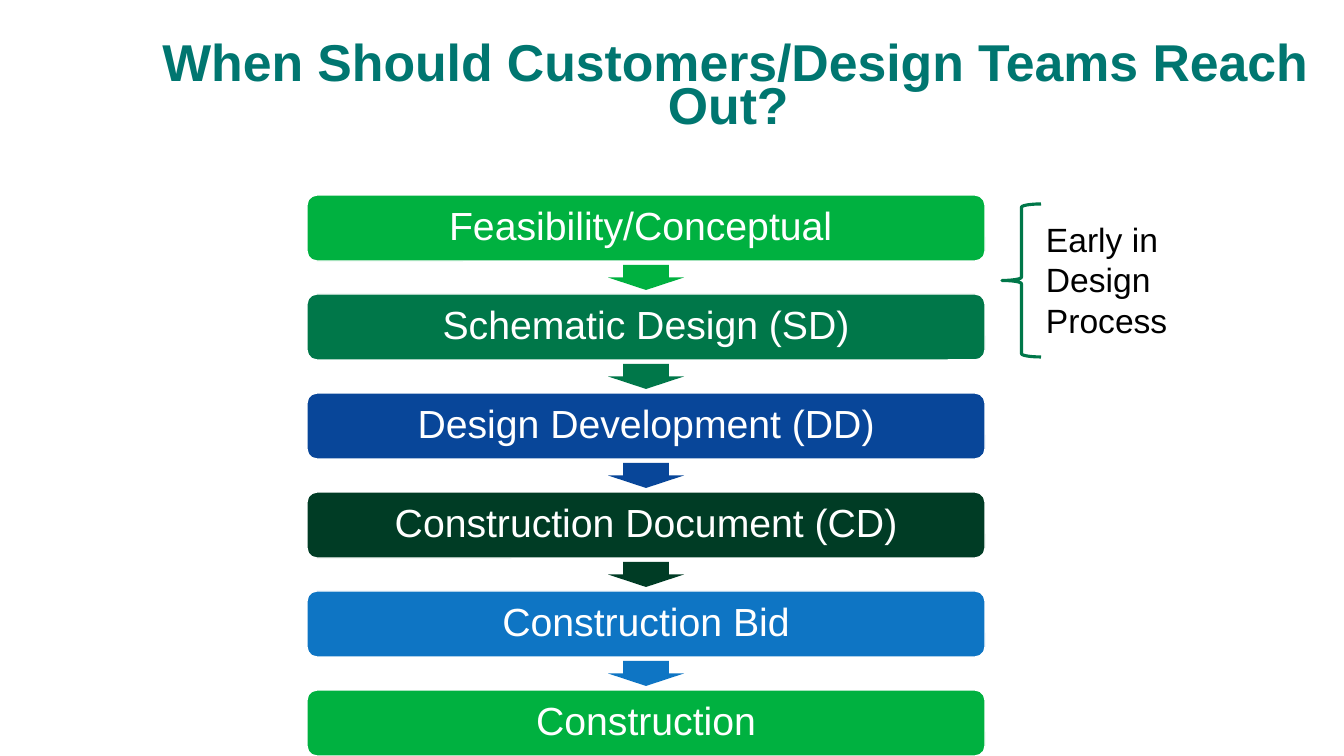
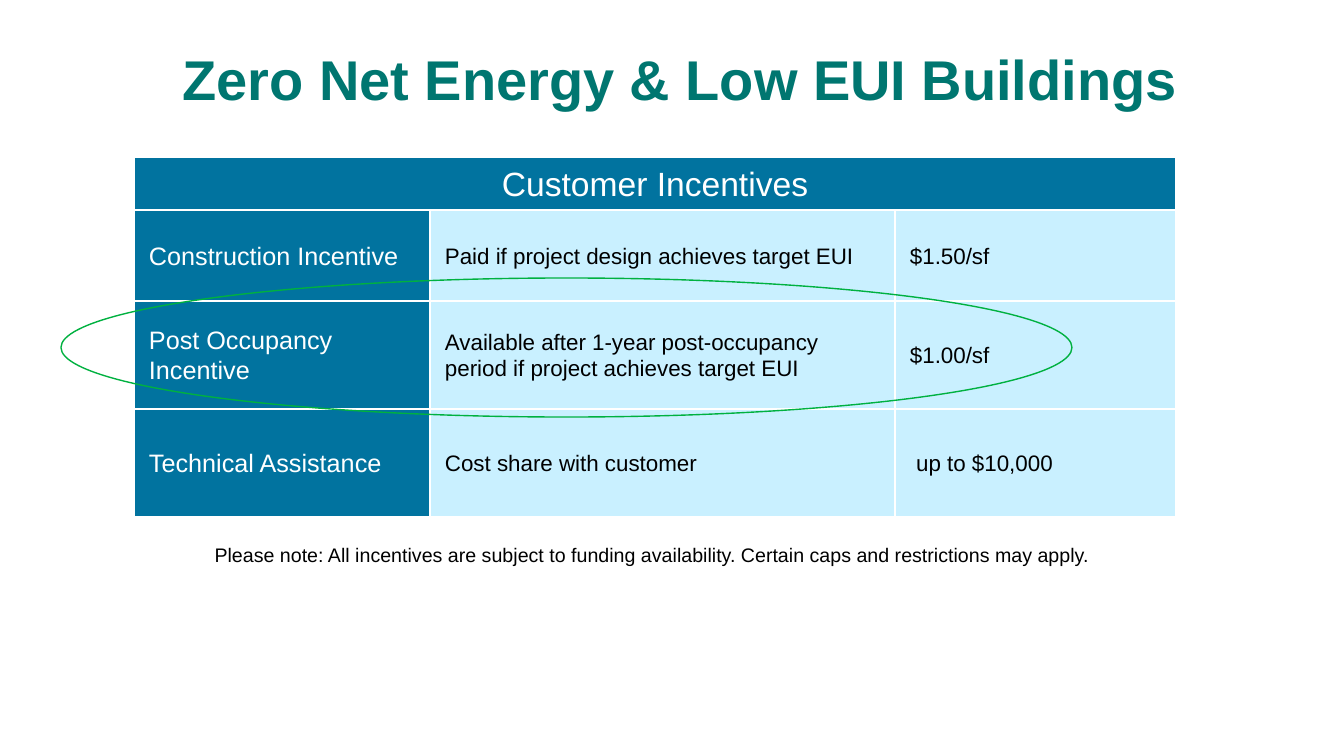
from lxml import etree
from pptx import Presentation
from pptx.dml.color import RGBColor
from pptx.enum import shapes, text
from pptx.oxml import ns
from pptx.util import Emu, Pt

PX = 914400 / 100.8
FONT = "Arial"
WHITE = RGBColor(0xFF, 0xFF, 0xFF)
BLACK = RGBColor(0x00, 0x00, 0x00)
TEAL = RGBColor(0x00, 0x76, 0x70)
GREEN = RGBColor(0x00, 0xB1, 0x40)
FOREST = RGBColor(0x00, 0x77, 0x49)
NAVY = RGBColor(0x08, 0x46, 0x99)
DARK_GREEN = RGBColor(0x00, 0x3C, 0x25)
BLUE = RGBColor(0x0E, 0x75, 0xC4)
HEADER_BLUE = RGBColor(0x01, 0x73, 0x9F)
PALE_BLUE = RGBColor(0xC9, 0xF0, 0xFF)

LEFT, CENTER = text.PP_ALIGN.LEFT, text.PP_ALIGN.CENTER
MIDDLE = text.MSO_ANCHOR.MIDDLE

PHASES = [
    ("Feasibility/Conceptual\u00a0", GREEN),
    ("Schematic Design (SD)", FOREST),
    ("Design Development (DD)", NAVY),
    ("Construction Document (CD)", DARK_GREEN),
    ("Construction Bid", BLUE),
    ("Construction", GREEN),
]
INCENTIVES = [
    ("Construction Incentive", "Paid if project design achieves target EUI", "$1.50/sf"),
    ("Post Occupancy Incentive",
     "Available after 1-year post-occupancy period if project achieves target EUI", "$1.00/sf"),
    ("Technical Assistance", "Cost share with customer", " up to $10,000"),
]


def px(length):
    return Emu(round(length * PX))


def write(frame, content, size, color, align=LEFT, bold=False, spacing=None):
    frame.word_wrap = True
    paragraph = frame.paragraphs[0]
    paragraph.text = content
    paragraph.alignment = align
    paragraph.line_spacing = spacing
    font = paragraph.font
    font.name, font.size, font.bold = FONT, Pt(size), bold
    font.color.rgb = color


def add_text(slide, box, content, size, color=BLACK, anchor=None, **style):
    frame = slide.shapes.add_textbox(*map(px, box)).text_frame
    frame.vertical_anchor = anchor
    write(frame, content, size, color, **style)


def add_title(slide, box, content, size, spacing):
    add_text(slide, box, content, size, TEAL, MIDDLE, align=CENTER, bold=True, spacing=spacing)


def add_shape(slide, kind, box, fill=None, line=None, width=1):
    shape = slide.shapes.add_shape(kind, *map(px, box))
    shape.shadow.inherit = False
    if fill is None:
        shape.fill.background()
    else:
        shape.fill.solid()
        shape.fill.fore_color.rgb = fill
    if line is None:
        shape.line.fill.background()
    else:
        shape.line.color.rgb = line
        shape.line.width = Pt(width)
    return shape


def add_phases(slide, box):
    """Stack of phase bars, each joined to the next by an arrow."""
    left, top, width, height = box
    bar_height, gap, arrow_width, arrow_height = 66, 4, 76, 25
    pitch = (height - bar_height) / (len(PHASES) - 1)
    for index, (name, color) in enumerate(PHASES):
        y = top + index * pitch
        bar = add_shape(slide, shapes.MSO_SHAPE.ROUNDED_RECTANGLE,
                        (left, y, width, bar_height), color, WHITE)
        bar.adjustments[0] = 0.15
        bar.text_frame.vertical_anchor = MIDDLE
        write(bar.text_frame, name, 28, WHITE, CENTER, spacing=0.9)
        if index < len(PHASES) - 1:
            arrow = add_shape(slide, shapes.MSO_SHAPE.DOWN_ARROW,
                              (left + (width - arrow_width) / 2, y + bar_height + gap,
                               arrow_width, arrow_height), color)
            arrow.adjustments[0], arrow.adjustments[1] = 0.6, 0.5


def add_brace_note(slide, box, content):
    """Brace with its remark on the right."""
    left, top, width, height = box
    brace_width = 39
    add_shape(slide, shapes.MSO_SHAPE.LEFT_BRACE, (left, top, brace_width, height),
              line=FOREST, width=2.25)
    add_text(slide, (left + 34, top + 10, width - 34, height - 20), content, 24)


def style_cell(cell, content, size, color, fill, margin, align=LEFT):
    cell.fill.solid()
    cell.fill.fore_color.rgb = fill
    cell.vertical_anchor = MIDDLE
    cell.margin_left = cell.margin_right = cell.margin_top = cell.margin_bottom = px(margin)
    write(cell.text_frame, content, size, color, align, spacing=1.07)
    # Borders precede the fill in the cell properties
    properties = cell._tc.get_or_add_tcPr()
    for position, side in enumerate(("lnL", "lnR", "lnT", "lnB")):
        border = etree.Element(ns.qn(f"a:{side}"), w=str(Pt(1)))
        solid = etree.SubElement(border, ns.qn("a:solidFill"))
        etree.SubElement(solid, ns.qn("a:srgbClr"), val=str(WHITE))
        properties.insert(position, border)


def add_incentives(slide, box):
    """Table with a merged heading row and a coloured first column."""
    columns, rows = (296, 465, 281), (50, 91, 108, 108)
    table = slide.shapes.add_table(len(rows), len(columns), *map(px, box)).table
    for column, width in zip(table.columns, columns):
        column.width = px(width)
    for row, height in zip(table.rows, rows):
        row.height = px(height)
    table.cell(0, 0).merge(table.cell(0, 2))
    style_cell(table.cell(0, 0), "Customer Incentives", 24, WHITE, HEADER_BLUE, 5, CENTER)
    for row, entries in enumerate(INCENTIVES, 1):
        for column, content in enumerate(entries):
            look = (16, BLACK, PALE_BLUE) if column else (18, WHITE, HEADER_BLUE)
            style_cell(table.cell(row, column), content, *look, 15)


def build_phase_slide(slide):
    add_title(slide, (109, 38, 1253, 104),
              "When Should Customers/Design Teams Reach Out? ", 37, 0.7)
    add_phases(slide, (307, 195, 678, 561))
    add_brace_note(slide, (1002, 204, 235, 153), "Early in Design Process")


def build_incentive_slide(slide):
    add_title(slide, (0, 52, 1344, 65), " Zero Net Energy & Low EUI Buildings", 40, 0.8)
    add_incentives(slide, (134, 157, 1042, 357))
    add_text(slide, (134, 538, 1042, 34),
             "Please note: All incentives are subject to funding availability. "
             "Certain caps and restrictions may apply. ", 14, align=CENTER)
    # Ring around the post-occupancy row
    add_shape(slide, shapes.MSO_SHAPE.OVAL, (61, 278, 1011, 139), line=GREEN)


def main():
    presentation = Presentation()
    presentation.slide_width, presentation.slide_height = px(1344), px(756)
    for build in (build_phase_slide, build_incentive_slide):
        build(presentation.slides.add_slide(presentation.slide_layouts[6]))
    presentation.save("out.pptx")


if __name__ == "__main__":
    main()
